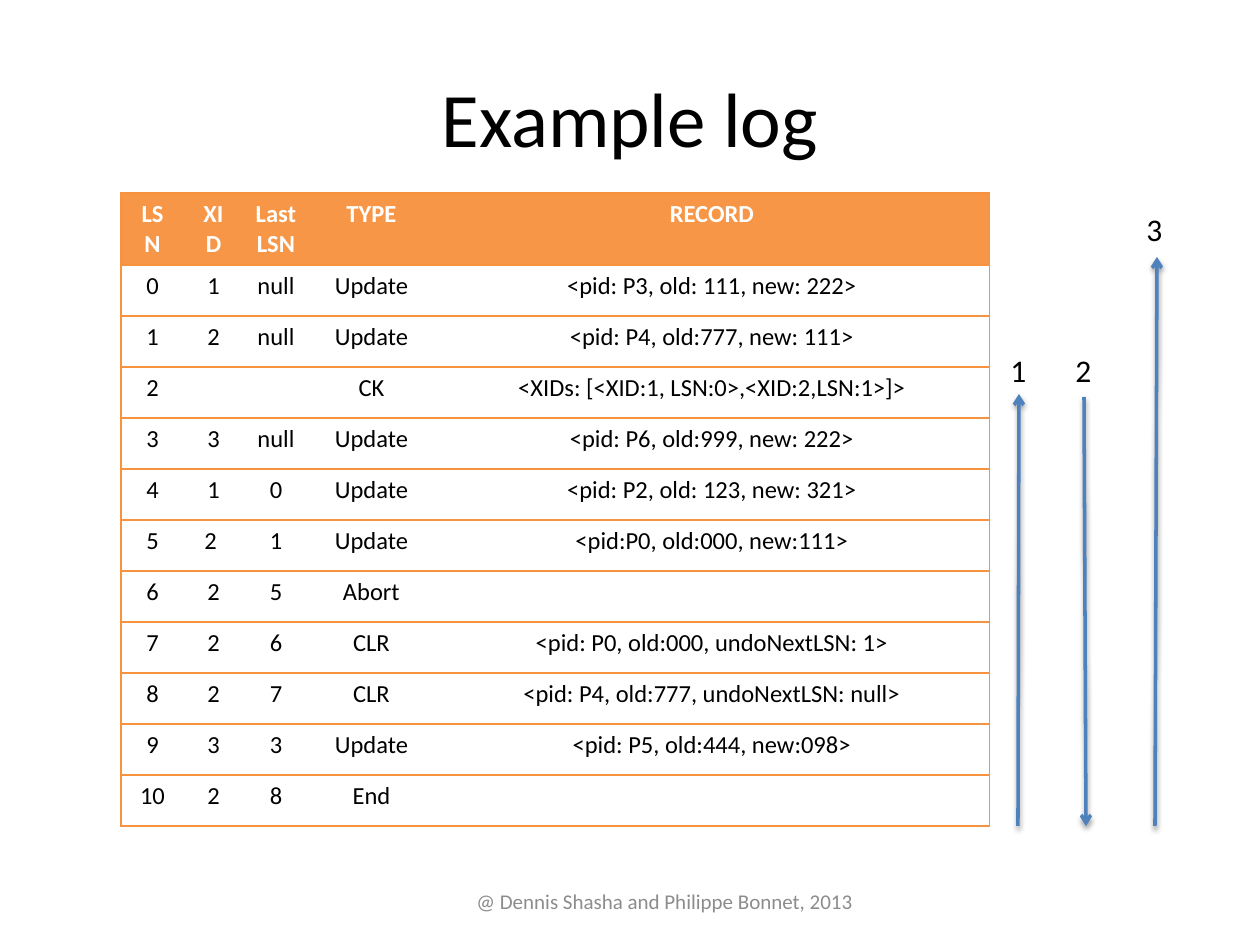
from lxml import etree
from pptx import Presentation
from pptx import util as u
from pptx.dml.color import RGBColor
from pptx.enum import shapes, text
from pptx.oxml import parse_xml
from pptx.oxml.ns import nsdecls, qn

PX = 914400 / 126
BLACK = RGBColor(0x00, 0x00, 0x00)
WHITE = RGBColor(0xFF, 0xFF, 0xFF)
GRAY = RGBColor(0x8C, 0x8C, 0x8C)
ORANGE = RGBColor(0xF7, 0x96, 0x46)
RULE = RGBColor(0xF6, 0x92, 0x40)
BLUE = RGBColor(0x4F, 0x81, 0xBD)
CENTER, LEFT = text.PP_ALIGN.CENTER, text.PP_ALIGN.LEFT

HEADER = ["LSN", "XID", "Last\vLSN", "TYPE", "RECORD"]
LOG = [
    ["0", "1", "null", "Update", "<pid: P3, old: 111, new: 222>"],
    ["1", "2", "null", "Update", "<pid: P4, old:777, new: 111>"],
    ["2", "", "", "CK", "<XIDs: [<XID:1, LSN:0>,<XID:2,LSN:1>]>"],
    ["3", "3", "null", "Update", "<pid: P6, old:999, new: 222>"],
    ["4", "1", "0", "Update", "<pid: P2, old: 123, new: 321>"],
    ["5", "2 ", "1", "Update", "<pid:P0, old:000, new:111>"],
    ["6", "2", "5", "Abort", ""],
    ["7", "2", "6", "CLR", "<pid: P0, old:000, undoNextLSN: 1>"],
    ["8", "2", "7", "CLR", "<pid: P4, old:777, undoNextLSN: null>"],
    ["9", "3", "3", "Update", "<pid: P5, old:444, new:098>"],
    ["10", "2", "8", "End", ""],
]
COL_WIDTHS = [63, 59, 66, 125, 556]
HEADER_HEIGHT, ROW_HEIGHT = 72, 51


def px(*lengths):
    return [u.Emu(round(n * PX)) for n in lengths]


class Deck:
    font = "Calibri"

    def __init__(self, prs):
        self.s = prs.slides.add_slide(prs.slide_layouts[5])

    def put_text(self, tf, words, size, color=BLACK, align=CENTER, bold=False):
        tf.text = words
        p = tf.paragraphs[0]
        p.alignment = align
        f = p.font
        f.name, f.size, f.bold = self.font, u.Pt(size), bold
        f.color.rgb = color

    def title(self, words, x, y, w, h):
        sp = self.s.shapes.title
        sp.left, sp.top, sp.width, sp.height = px(x, y, w, h)
        sp.text_frame.vertical_anchor = text.MSO_ANCHOR.MIDDLE
        self.put_text(sp.text_frame, words, 44)

    def label(self, words, x, y, w, h, size=18, color=BLACK, align=LEFT,
              anchor=text.MSO_ANCHOR.TOP, wrap=False):
        tf = self.s.shapes.add_textbox(*px(x, y, w, h)).text_frame
        tf.word_wrap = wrap
        tf.vertical_anchor = anchor
        self.put_text(tf, words, size, color, align)

    def border(self, cell, side, visible):
        ln = etree.SubElement(cell._tc.get_or_add_tcPr(), qn("a:ln" + side))
        if visible:
            ln.set("w", str(u.Pt(0.75)))
            fill = etree.SubElement(ln, qn("a:solidFill"))
            etree.SubElement(fill, qn("a:srgbClr"), val=str(RULE))
        else:
            etree.SubElement(ln, qn("a:noFill"))

    def table(self, rows, x, y):
        height = HEADER_HEIGHT + ROW_HEIGHT * (len(rows) - 1)
        frame = self.s.shapes.add_table(len(rows), len(COL_WIDTHS),
                                        *px(x, y, sum(COL_WIDTHS), height))
        tbl = frame.table
        tbl.horz_banding = False
        for col, width in zip(tbl.columns, px(*COL_WIDTHS)):
            col.width = width
        last = len(COL_WIDTHS) - 1
        for i, row in enumerate(rows):
            head = i == 0
            tbl.rows[i].height = px(HEADER_HEIGHT if head else ROW_HEIGHT)[0]
            for j, words in enumerate(row):
                cell = tbl.cell(i, j)
                self.put_text(cell.text_frame, words, 14,
                              WHITE if head else BLACK, bold=head)
                for side, visible in (("L", j == 0), ("R", j == last),
                                      ("T", True), ("B", True)):
                    self.border(cell, side, visible)
                if head:
                    cell.fill.solid()
                    cell.fill.fore_color.rgb = ORANGE
                else:
                    cell.fill.background()

    def arrow(self, x1, y1, x2, y2):
        c = self.s.shapes.add_connector(shapes.MSO_CONNECTOR.STRAIGHT,
                                        *px(x1, y1, x2, y2))
        c.line.color.rgb = BLUE
        c.line.width = u.Pt(2)
        spPr = c._element.spPr
        etree.SubElement(spPr.find(qn("a:ln")), qn("a:tailEnd"), type="arrow")
        spPr.append(parse_xml(
            f'<a:effectLst {nsdecls("a")}>'
            '<a:outerShdw blurRad="40000" dist="20000" dir="5400000" rotWithShape="0">'
            '<a:srgbClr val="000000"><a:alpha val="38000"/></a:srgbClr>'
            '</a:outerShdw></a:effectLst>'))


def main():
    prs = Presentation()
    prs.slide_width, prs.slide_height = px(1260, 945)
    deck = Deck(prs)

    # Title and footer
    deck.title("Example log", 63, 38, 1134, 158)
    deck.label("@ Dennis Shasha and Philippe Bonnet, 2013 ", 431, 876, 472, 50,
               12, GRAY, CENTER, text.MSO_ANCHOR.MIDDLE, wrap=True)

    # Log records
    deck.table([HEADER] + LOG, 121, 193)

    # The three passes over the log, each with its number
    passes = [
        ("1", 998, 345, (1018, 826, 1019, 394)),
        ("2", 1063, 345, (1084, 397, 1086, 826)),
        ("3", 1134, 204, (1155, 826, 1157, 257)),
    ]
    for number, x, y, ends in passes:
        deck.arrow(*ends)
        deck.label(number, x, y, 42, 50)

    prs.save("out.pptx")


if __name__ == "__main__":
    main()
